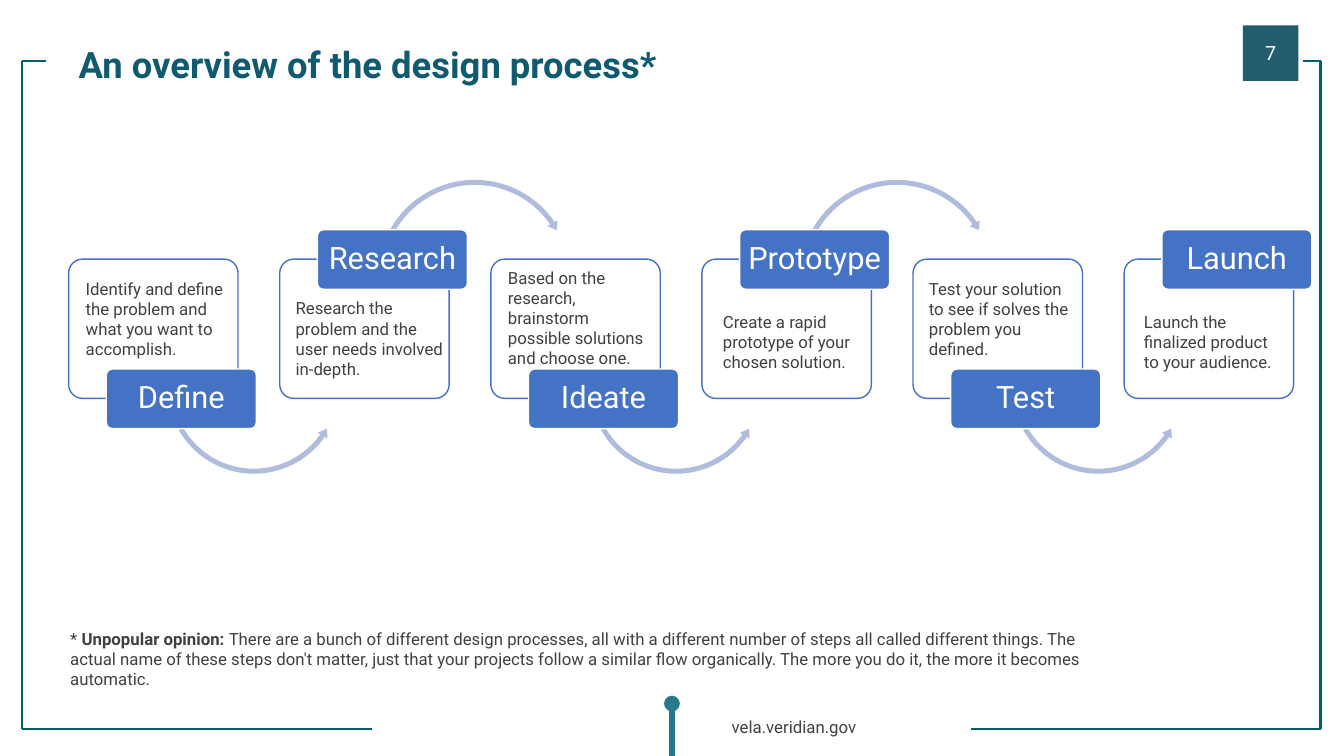
from lxml import etree
from pptx import Presentation
from pptx.dml.color import RGBColor
from pptx.enum.shapes import MSO_CONNECTOR as Connector, MSO_SHAPE as Shape
from pptx.enum.text import MSO_ANCHOR as Anchor, MSO_AUTO_SIZE as AutoSize, PP_ALIGN as Align
from pptx.oxml.ns import qn
from pptx.util import Cm, Pt

WHITE = RGBColor(0xFF, 0xFF, 0xFF)
INK = RGBColor(0x41, 0x40, 0x42)
TITLE = RGBColor(0x10, 0x5A, 0x70)
FRAME = RGBColor(0x00, 0x5E, 0x6E)
BADGE = RGBColor(0x22, 0x5E, 0x6E)
PIN = RGBColor(0x28, 0x79, 0x8C)
BLUE = RGBColor(0x44, 0x72, 0xC4)
ARROW = RGBColor(0xB0, 0xBC, 0xDE)

PAGE_WIDTH, PAGE_HEIGHT = 33.87, 19.05
CARD_WIDTH, CARD_HEIGHT, CARD_PITCH = 4.27, 3.51, 5.32

STEPS = [
    ("Define", "Identify and define the problem and what you want to accomplish.", (0.18, 0.36, 4.11, 2.29)),
    ("Research", "Research the problem and the user needs involved in-depth.", (0.15, 0.86, 4.29, 2.29)),
    ("Ideate", "Based on the research, brainstorm possible solutions and choose one.", (0.18, 0.08, 3.96, 2.8)),
    ("Prototype", "Create a rapid prototype of your chosen solution.", (0.28, 1.19, 3.78, 1.78)),
    ("Test", "Test your solution to see if solves the problem you defined.", (0.15, 0.36, 4.04, 2.29)),
    ("Launch", "Launch the finalized product to your audience.", (0.25, 1.19, 3.78, 1.78)),
]
NOTE = [
    ("* ", False),
    ("Unpopular opinion: ", True),
    ("There are a bunch of different design processes, all with a different number of steps all called "
     "different things. The actual name of these steps don't matter, just that your projects follow a "
     "similar flow organically. The more you do it, the more it becomes automatic.", False),
]


def write(shape, text, size=12, color=INK, bold=False, align=Align.LEFT,
          anchor=Anchor.TOP, spacing=1.0, inset=None):
    frame = shape.text_frame
    frame.word_wrap = True
    frame.auto_size = AutoSize.NONE
    frame.vertical_anchor = anchor
    if inset is not None:
        frame.margin_left = frame.margin_right = Cm(inset)
        frame.margin_top = frame.margin_bottom = Cm(inset)
    para = frame.paragraphs[0]
    para.alignment = align
    para.line_spacing = spacing
    for words, strong in ([(text, bold)] if isinstance(text, str) else text):
        span = para.add_run()
        span.text = words
        span.font.name = "Roboto"
        span.font.size = Pt(size)
        span.font.bold = strong
        span.font.color.rgb = color


def add_text(page, box, text, **style):
    write(page.shapes.add_textbox(*map(Cm, box)), text, **style)


def add_block(page, kind, box, fill, outline=None, adjust=()):
    block = page.shapes.add_shape(kind, *map(Cm, box))
    block.shadow.inherit = False
    block.fill.solid()
    block.fill.fore_color.rgb = fill
    if outline is None:
        block.line.fill.background()
    else:
        block.line.color.rgb = outline
        block.line.width = Pt(1)
    for index, value in enumerate(adjust):
        block.adjustments[index] = value
    return block


def add_line(page, start, end, color, width):
    line = page.shapes.add_connector(Connector.STRAIGHT, *map(Cm, start + end))
    line.line.color.rgb = color
    line.line.width = Pt(width)
    etree.SubElement(line._element.spPr, qn("a:effectLst"))


def add_frame(page, box):
    left, top, width, height = box
    right, bottom = left + width, top + height
    for side, upper_end, lower_end in ((left, 1.17, 9.37), (right, 32.84, 24.46)):
        add_line(page, (upper_end, top), (side, top), FRAME, 1.5)
        add_line(page, (side, top), (side, bottom), FRAME, 1.5)
        add_line(page, (side, bottom), (lower_end, bottom), FRAME, 1.5)


def add_badge(page, box, number):
    badge = add_block(page, Shape.RECTANGLE, box, BADGE)
    write(badge, number, size=14, color=WHITE, align=Align.CENTER, anchor=Anchor.MIDDLE, inset=0.1)


def add_footer(page, box):
    left, top, width, height = box
    middle = PAGE_WIDTH / 2
    add_line(page, (middle, PAGE_HEIGHT), (middle, top + 0.2), PIN, 4.5)
    add_block(page, Shape.OVAL, (middle - 0.2, top, 0.4, 0.4), PIN)
    add_text(page, (left, top + 0.4, width, height - 0.4), "vela.veridian.gov")


def add_title(page, box, text):
    title = page.shapes.title
    title.left, title.top, title.width, title.height = map(Cm, box)
    write(title, text, size=26, color=TITLE, bold=True, spacing=0.9)


def add_step(page, box, step, raised, last):
    left, top, width, height = box
    name, description, (text_left, text_top, text_width, text_height) = step
    card = add_block(page, Shape.ROUNDED_RECTANGLE, box, WHITE, BLUE, (0.1,))
    color = card._element.spPr.find(qn("a:solidFill"))[0]
    etree.SubElement(color, qn("a:alpha"), val="90000")
    if raised:
        label_top = top - 0.74
        kind, arrow = Shape.CIRCULAR_ARROW, (left + 2.39, top - 2.08, 5.05, 5.05)
        adjust = (0.025, 2.971, 195.274, 125.755, 0.029)
    else:
        label_top = top + 2.77
        kind, arrow = Shape.LEFT_CIRCULAR_ARROW, (left + 2.41, top + 0.97, 4.52, 4.52)
        adjust = (0.028, 3.352, 21.107, 90.245, 0.032)
    if not last:
        add_block(page, kind, arrow, ARROW, adjust=adjust)
    label = add_block(page, Shape.ROUNDED_RECTANGLE, (left + 0.95, label_top, 3.78, 1.5), BLUE, WHITE, (0.1,))
    write(label, name, size=22, color=WHITE, align=Align.CENTER, anchor=Anchor.MIDDLE, spacing=0.9, inset=0.1)
    add_text(page, (left + text_left, top + text_top, text_width, text_height), description)


def add_process(page, left, top):
    for index, step in enumerate(STEPS):
        box = (left + index * CARD_PITCH, top, CARD_WIDTH, CARD_HEIGHT)
        add_step(page, box, step, raised=index % 2 == 1, last=index == len(STEPS) - 1)


def main():
    deck = Presentation()
    deck.slide_width, deck.slide_height = Cm(PAGE_WIDTH), Cm(PAGE_HEIGHT)
    page = deck.slides.add_slide(deck.slide_layouts[5])
    add_badge(page, (31.32, 0.64, 1.4, 1.4), "7")
    add_footer(page, (18.19, 17.53, 8.43, 1.16))
    add_frame(page, (0.55, 1.53, 32.73, 16.85))
    add_process(page, 1.73, 6.53)
    add_title(page, (1.73, 1.07, 21.64, 1.45), "An overview of the design process*")
    add_text(page, (1.52, 15.72, 27.08, 1.8), NOTE)
    deck.save("out.pptx")


if __name__ == "__main__":
    main()
